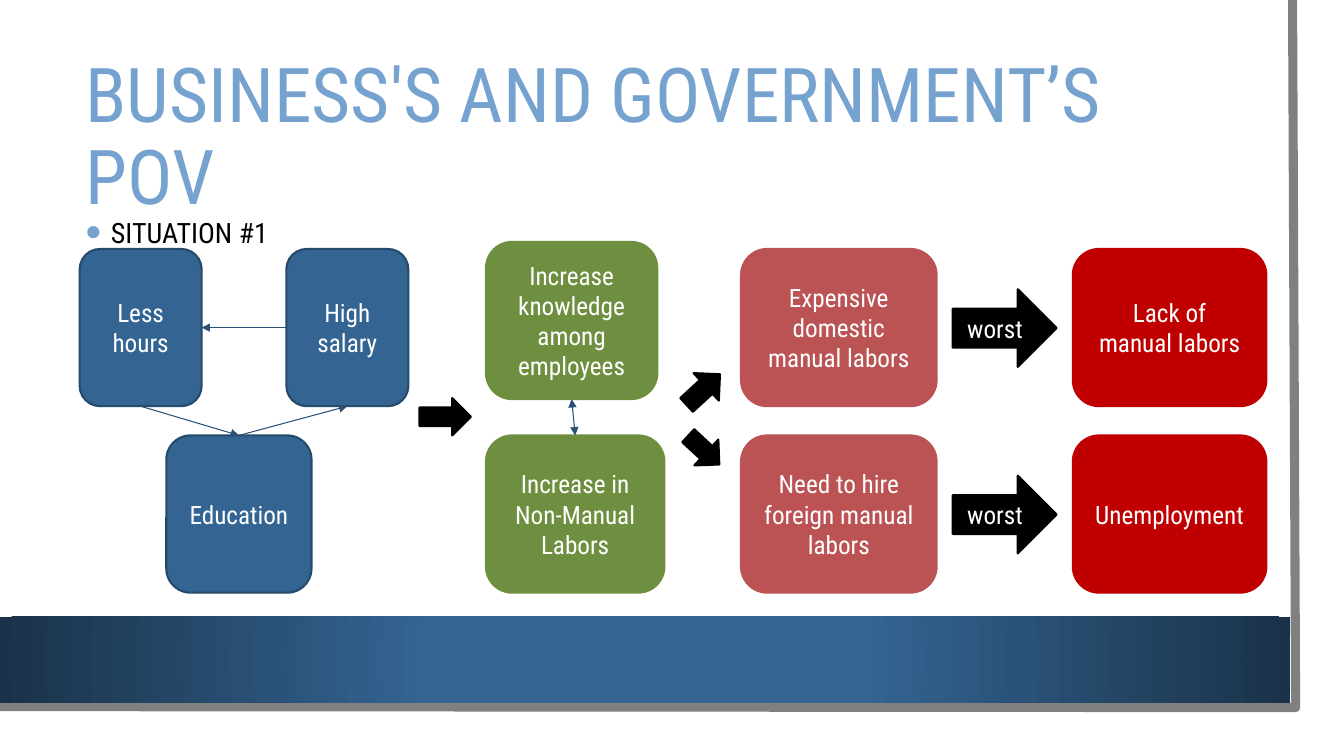
from lxml import etree
from pptx import Presentation
from pptx.dml.color import RGBColor
from pptx.enum.shapes import MSO_CONNECTOR, MSO_SHAPE
from pptx.enum.text import MSO_ANCHOR, MSO_AUTO_SIZE, PP_ALIGN
from pptx.oxml.ns import qn
from pptx.util import Pt

ROUNDED, RECTANGLE = MSO_SHAPE.ROUNDED_RECTANGLE, MSO_SHAPE.RECTANGLE
ARROW, STRAIGHT = MSO_SHAPE.RIGHT_ARROW, MSO_CONNECTOR.STRAIGHT
LEFT, CENTER = PP_ALIGN.LEFT, PP_ALIGN.CENTER
TOP, MIDDLE, NO_FIT = MSO_ANCHOR.TOP, MSO_ANCHOR.MIDDLE, MSO_AUTO_SIZE.NONE
SITE_TOP, SITE_LEFT, SITE_BOTTOM, SITE_RIGHT = range(4)

PX = 9144  # 100 px to the inch
FONT = "Roboto Condensed"
COLORS = {
    "title": "75A2CE", "text": "000000", "label": "FFFFFF", "frame": "808080",
    "band": "346492", "band_edge": "1A3249",
    "cause": "346492", "cause_edge": "264A6C", "link": "2A5075",
    "effect": "6F8F40", "problem": "BB5354", "result": "C00000",
    "arrow": "000000",
}
BOX_HEIGHT = 156
ROW_STEP = 185


def color(name):
    return RGBColor.from_string(COLORS[name])


def px(*lengths):
    return [length * PX for length in lengths]


def add_text(paragraph, text, size, color_name, align):
    paragraph.alignment = align
    run = paragraph.add_run()
    run.text = text
    run.font.name = FONT
    run.font.size = Pt(size)
    run.font.color.rgb = color(color_name)


def add_block(shapes, kind, box, fill, edge=None, lines=(), rotation=0):
    block = shapes.add_shape(kind, *px(*box))
    block.shadow.inherit = False
    block.rotation = rotation
    block.fill.solid()
    block.fill.fore_color.rgb = color(fill)
    block.line.color.rgb = color(edge or fill)
    block.line.width = Pt(1.5)
    frame = block.text_frame
    frame.word_wrap = True
    frame.vertical_anchor = MIDDLE
    for index, line in enumerate(lines):
        paragraph = frame.add_paragraph() if index else frame.paragraphs[0]
        add_text(paragraph, line, 18, "label", CENTER)
    return block


def add_link(shapes, start, start_site, end, end_site, heads=("tailEnd",)):
    link = shapes.add_connector(STRAIGHT, 0, 0, 0, 0)
    link.begin_connect(start, start_site)
    link.end_connect(end, end_site)
    link.line.color.rgb = color("link")
    link.line.width = Pt(0.75)
    properties = link._element.spPr
    outline = properties.find(qn("a:ln"))
    for head in heads:
        etree.SubElement(outline, qn("a:" + head), type="triangle")
    etree.SubElement(properties, qn("a:effectLst"))


def add_page_frame(shapes, box):
    left, top, width, height = box
    # Grey edge along the right and bottom
    builder = shapes.build_freeform(left + width - 3, top, PX)
    builder.add_line_segments(
        [(left + width, top + height), (left, top + height - 1)], close=False)
    edge = builder.convert_to_shape()
    edge.shadow.inherit = False
    edge.fill.background()
    edge.line.color.rgb = color("frame")
    edge.line.width = Pt(6.5)

    # Blue band with a radial gradient
    band = shapes.add_shape(
        RECTANGLE, *px(left + 3, top + 612, width - 8, 85))
    band.shadow.inherit = False
    band.line.fill.background()
    band.fill.gradient()
    for stop, position, name in zip(
            band.fill.gradient_stops, (0.34, 1), ("band", "band_edge")):
        stop.position = position
        stop.color.rgb = color(name)
    gradient = band._element.spPr.find(qn("a:gradFill"))
    gradient.remove(gradient.find(qn("a:lin")))
    circle = etree.SubElement(gradient, qn("a:path"), path="circle")
    etree.SubElement(circle, qn("a:fillToRect"),
                     {side: "50000" for side in "ltrb"})


def place(placeholder, box, anchor):
    (placeholder.left, placeholder.top,
     placeholder.width, placeholder.height) = px(*box)
    frame = placeholder.text_frame
    frame.word_wrap = True
    frame.auto_size = NO_FIT
    frame.vertical_anchor = anchor
    return frame


def add_heading(slide, box):
    left, top, width, height = box
    title = place(slide.shapes.title, box, MIDDLE).paragraphs[0]
    title.line_spacing = 0.9
    add_text(title, "BUSINESS'S AND GOVERNMENT’S POV", 54, "title", LEFT)

    # Bulleted situation line
    frame = place(slide.placeholders[1], (left, top + 100, width, 413), TOP)
    frame.margin_top = 32 * PX
    situation = frame.paragraphs[0]
    properties = situation._p.get_or_add_pPr()
    properties.set("marL", str(25 * PX))
    properties.set("indent", str(-25 * PX))
    bullet_color = etree.SubElement(properties, qn("a:buClr"))
    etree.SubElement(bullet_color, qn("a:srgbClr"), val=COLORS["title"])
    etree.SubElement(properties, qn("a:buSzPct"), val="160000")
    etree.SubElement(properties, qn("a:buFont"), typeface="Arial")
    etree.SubElement(properties, qn("a:buChar"), char="•")
    situation.line_spacing = 1.2
    situation.space_before = Pt(0)
    add_text(situation, "SITUATION #1", 20, "text", LEFT)


def add_cause_cycle(slide, box):
    left, top, width, _ = box
    shapes = slide.shapes.add_group_shape().shapes

    def add_cause(x, y, cause_width, text):
        return add_block(shapes, ROUNDED, (x, y, cause_width, BOX_HEIGHT),
                         "cause", "cause_edge", [text])

    salary = add_cause(left + width - 121, top, 121, "High salary")
    hours = add_cause(left, top, 121, "Less hours")
    education = add_cause(left + 86, top + ROW_STEP, 144, "Education")
    add_link(shapes, hours, SITE_BOTTOM, education, SITE_TOP)
    add_link(shapes, education, SITE_TOP, salary, SITE_BOTTOM)
    add_link(shapes, salary, SITE_LEFT, hours, SITE_RIGHT)


def add_effects(slide, box):
    left, top, width, _ = box
    shapes = slide.shapes
    knowledge = add_block(
        shapes, ROUNDED, (left, top - 7, width - 7, BOX_HEIGHT), "effect",
        lines=["Increase knowledge among employees"])
    non_manual = add_block(
        shapes, ROUNDED, (left, top + ROW_STEP, width, BOX_HEIGHT), "effect",
        lines=["Increase in Non-Manual Labors"])
    add_link(shapes, knowledge, SITE_BOTTOM, non_manual, SITE_TOP,
             ("headEnd", "tailEnd"))

    # Arrows into and out of the effects
    for arrow_box, rotation in (
            ((left - 66, top + 148, 51, 37), 0),
            ((left + 193, top + 121, 45, 37), 317.4),
            ((left + 195, top + 182, 42, 35), 42.8)):
        add_block(shapes, ARROW, arrow_box, "arrow", rotation=rotation)


def add_outcomes(slide, box):
    left, top, width, _ = box
    outcomes = (
        ("Expensive domestic manual labors", ["Lack of", "manual labors"]),
        ("Need to hire foreign manual labors", ["Unemployment"]),
    )
    for row, (problem, result) in enumerate(outcomes):
        y = top + row * ROW_STEP
        add_block(slide.shapes, ROUNDED, (left, y, 194, BOX_HEIGHT),
                  "problem", lines=[problem])
        add_block(slide.shapes, ARROW, (left + 210, y + 40, 103, 77),
                  "arrow", lines=["worst"])
        add_block(slide.shapes, ROUNDED,
                  (left + width - 192, y, 192, BOX_HEIGHT),
                  "result", lines=result)


def main():
    presentation = Presentation()
    presentation.slide_width, presentation.slide_height = px(1333, 750)
    slide = presentation.slides.add_slide(presentation.slide_layouts[1])
    add_page_frame(slide.shapes, (-3, 0, 1288, 702))
    add_heading(slide, (75, 75, 1137, 126))
    add_cause_cycle(slide, (79, 247, 326, 341))
    add_effects(slide, (482, 247, 177, 341))
    add_outcomes(slide, (735, 247, 521, 341))
    presentation.save("out.pptx")


if __name__ == "__main__":
    main()
